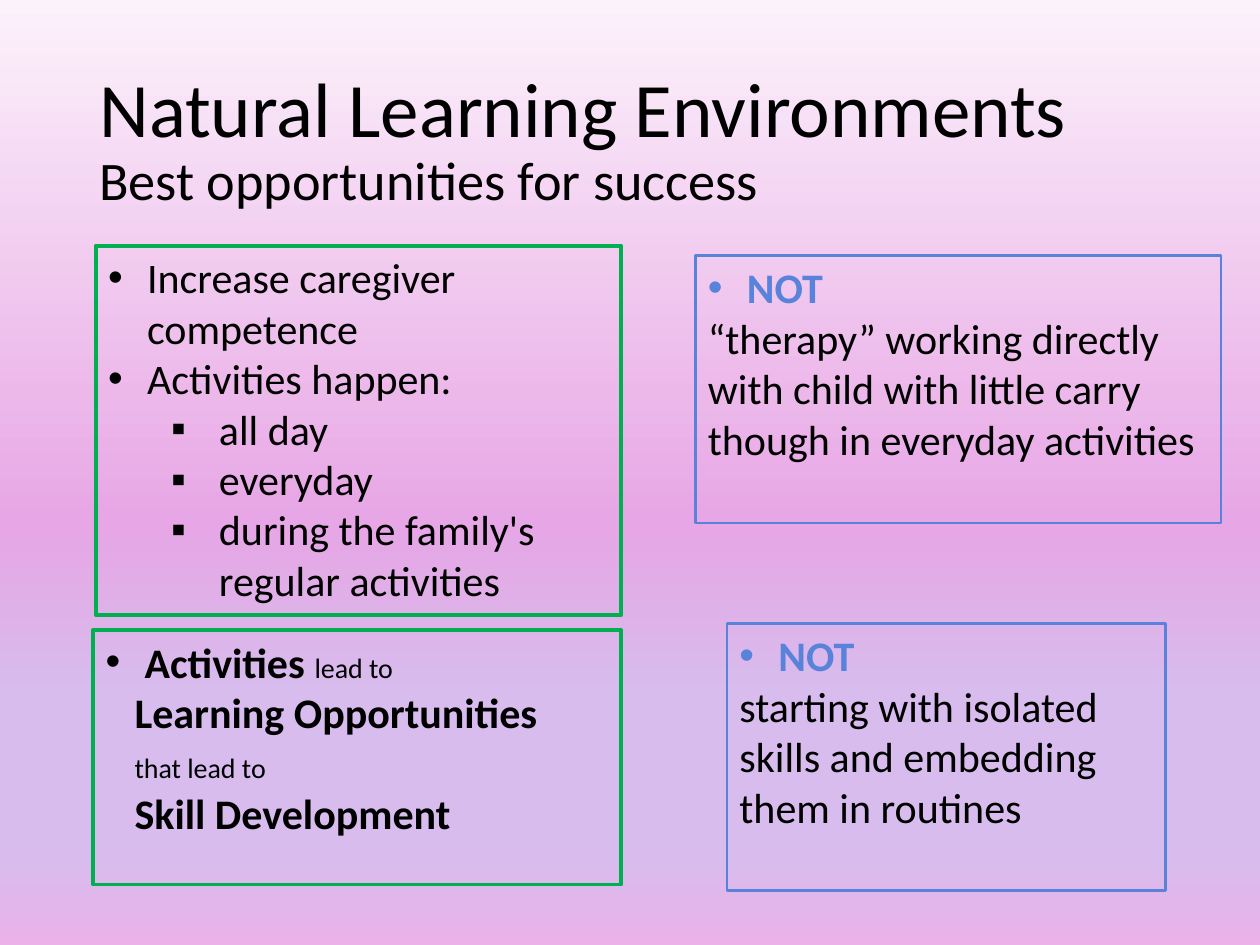
from dataclasses import dataclass

from lxml import etree
from pptx import Presentation
from pptx.dml.color import RGBColor
from pptx.enum.shapes import MSO_SHAPE
from pptx.enum.text import MSO_ANCHOR, PP_ALIGN
from pptx.oxml.ns import qn
from pptx.util import Inches, Pt

RECT = MSO_SHAPE.RECTANGLE
TOP, MIDDLE = MSO_ANCHOR.TOP, MSO_ANCHOR.MIDDLE
LEFT = PP_ALIGN.LEFT
FONT = "Calibri"
COLORS = {"black": "000000", "green": "00B050", "blue": "5982DB"}
BACKGROUND_STOPS = [(0, "FCF2FB"), (42, "ECB8EA"), (55, "E7A6E5"),
                    (74, "D7BCED"), (90, "D7BCED"), (100, "EAB2E9")]


@dataclass
class Piece:
    text: str
    size: float = 24
    color: str = "black"
    bold: bool = False


@dataclass
class Para:
    pieces: list[Piece]
    bullet: str = ""
    level: int = 0
    margin: float = 0
    hanging: float = 0
    before: float = 0
    after: float = 0


@dataclass
class Box:
    left: float
    top: float
    width: float
    height: float
    line: str
    line_width: float
    paras: list[Para]


def bullet(*pieces: Piece) -> Para:
    return Para(list(pieces), "•", margin=0.31, hanging=0.31)


def sub_bullet(text: str) -> Para:
    return Para([Piece(text)], "▪", level=1, margin=0.88, hanging=0.38)


def indented(piece: Piece, before: float = 0, after: float = 0) -> Para:
    return Para([piece], margin=0.23, before=before, after=after)


def not_box(left: float, top: float, width: float, text: str) -> Box:
    return Box(left, top, width, 2.12, "blue", 1.5,
               [bullet(Piece("NOT", color="blue", bold=True)), Para([Piece(text)])])


BOXES = [
    Box(0.76, 1.95, 4.17, 2.93, "green", 2.25, [
        bullet(Piece("Increase caregiver competence")),
        bullet(Piece("Activities happen:")),
        sub_bullet("all day"),
        sub_bullet("everyday"),
        sub_bullet("during the family's regular activities"),
    ]),
    Box(0.74, 5, 4.19, 2.02, "green", 2.25, [
        bullet(Piece("Activities ", bold=True), Piece("lead to", size=16)),
        indented(Piece("Learning Opportunities", bold=True)),
        indented(Piece("that lead to", size=16), before=7.6, after=2),
        indented(Piece("Skill Development", bold=True)),
    ]),
    not_box(5.52, 2.03, 4.17, "“therapy” working directly with child with little "
            "carry though in everyday activities"),
    not_box(5.77, 4.95, 3.48, "starting with isolated skills and embedding them in routines"),
]


def style_run(r, size: float, color: str = "black", bold: bool = False) -> None:
    r.font.name = FONT
    r.font.size = Pt(size)
    r.font.bold = bold
    r.font.color.rgb = RGBColor.from_string(COLORS[color])


def paint_background(s) -> None:
    fill = s.background.fill
    fill.gradient()
    fill.gradient_angle = 270
    stops = next(s.element.iter(qn("a:gsLst")))
    for stop in list(stops):
        stops.remove(stop)
    for position, color in BACKGROUND_STOPS:
        stop = etree.SubElement(stops, qn("a:gs"), pos=str(position * 1000))
        etree.SubElement(stop, qn("a:srgbClr"), val=color)


def add_title(s) -> None:
    tf = s.shapes.add_textbox(Inches(0.69), Inches(0.4), Inches(8.62), Inches(1.45)).text_frame
    tf.word_wrap = True
    tf.vertical_anchor = MIDDLE
    tf.text = "Natural Learning Environments\vBest opportunities for success"
    p = tf.paragraphs[0]
    p.line_spacing = 0.9
    for r, size in zip(p.runs, (44, 31)):
        style_run(r, size)


def write_para(p, para: Para) -> None:
    p.alignment = LEFT
    p.level = para.level
    props = p._p.get_or_add_pPr()
    props.set("marL", str(Inches(para.margin)))
    props.set("indent", str(-Inches(para.hanging)))
    if para.bullet:
        etree.SubElement(props, qn("a:buFont"), typeface="Arial")
        etree.SubElement(props, qn("a:buChar"), char=para.bullet)
    if para.before:
        p.space_before = Pt(para.before)
    if para.after:
        p.space_after = Pt(para.after)
    for piece in para.pieces:
        r = p.add_run()
        r.text = piece.text
        style_run(r, piece.size, piece.color, piece.bold)


def add_box(s, box: Box) -> None:
    sp = s.shapes.add_shape(RECT, Inches(box.left), Inches(box.top),
                            Inches(box.width), Inches(box.height))
    sp.shadow.inherit = False
    sp.fill.background()
    sp.line.color.rgb = RGBColor.from_string(COLORS[box.line])
    sp.line.width = Pt(box.line_width)
    tf = sp.text_frame
    tf.word_wrap = True
    tf.vertical_anchor = TOP
    for i, para in enumerate(box.paras):
        write_para(tf.add_paragraph() if i else tf.paragraphs[0], para)


def main() -> None:
    prs = Presentation()
    prs.slide_width, prs.slide_height = Inches(10), Inches(7.5)
    s = prs.slides.add_slide(prs.slide_layouts[6])
    paint_background(s)
    add_title(s)
    for box in BOXES:
        add_box(s, box)
    prs.save("out.pptx")


if __name__ == "__main__":
    main()
